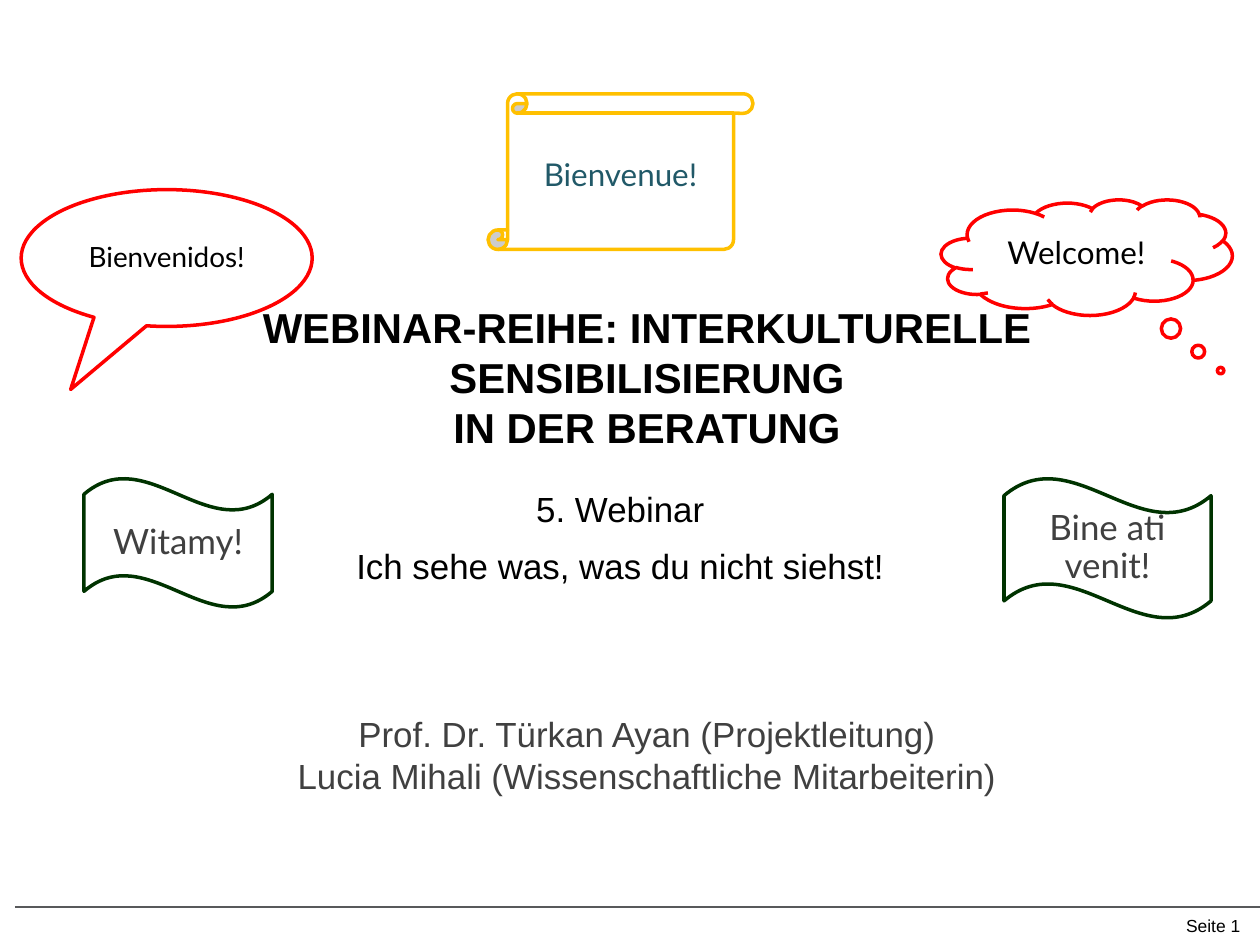
import pptx
import pptx.util
import pptx.dml.color
import pptx.enum.shapes
import pptx.enum.text
from dataclasses import dataclass
from lxml import etree

Cm = pptx.util.Cm
Pt = pptx.util.Pt
Kind = pptx.enum.shapes.MSO_SHAPE
Align = pptx.enum.text.PP_ALIGN
Anchor = pptx.enum.text.MSO_ANCHOR


@dataclass(frozen=True)
class Theme:
    """Colours, fonts and type sizes of the slide."""
    black: str = "000000"
    white: str = "FFFFFF"
    grey: str = "404040"
    rule: str = "58595B"
    red: str = "FF0000"
    gold: str = "FFC000"
    green: str = "003300"
    teal: str = "215968"
    sans: str = "Arial"
    round: str = "Lato"
    title: int = 24
    large: int = 20
    medium: int = 18
    small: int = 16
    page: int = 10


theme = Theme()


def tint(code):
    """Turn a hex code into a colour."""
    return pptx.dml.color.RGBColor.from_string(code)


def write(frame, *lines, size=theme.large, color=theme.black, font=theme.sans,
          bold=False, align=Align.CENTER, anchor=Anchor.TOP, inset=True,
          pitch=None, gap=0):
    """Fill a text frame with one paragraph per line."""
    frame.word_wrap = True
    frame.vertical_anchor = anchor
    side, edge = (Cm(0.25), Cm(0.13)) if inset else (0, 0)
    frame.margin_left = frame.margin_right = side
    frame.margin_top = frame.margin_bottom = edge
    for i, line in enumerate(lines):
        para = frame.add_paragraph() if i else frame.paragraphs[0]
        para.text = line
        para.alignment = align
        if pitch:
            para.line_spacing = pitch
        if i and gap:
            para.space_before = Pt(gap)
        for run in para.runs:
            run.font.name = font
            run.font.size = Pt(size)
            run.font.bold = bold
            run.font.color.rgb = tint(color)


def place(box, left, top, wide, high):
    """Shift a rectangle in centimetres into its box."""
    return Cm(box[0] + left), Cm(box[1] + top), Cm(wide), Cm(high)


def label(slide, area, *lines, **style):
    """Add a text box."""
    write(slide.shapes.add_textbox(*area).text_frame, *lines, **style)


def foot(slide, box):
    """Draw the rule and the page number along the bottom."""
    left, top, wide, high = box
    rule = slide.shapes.add_connector(
        pptx.enum.shapes.MSO_CONNECTOR.STRAIGHT,
        Cm(left), Cm(top), Cm(left + wide), Cm(top))
    rule.line.color.rgb = tint(theme.rule)
    rule.line.width = Pt(1.25)
    etree.SubElement(rule.element.spPr, pptx.oxml.ns.qn("a:effectLst"))
    label(slide, place(box, wide - 2.72, 0.03, 2.57, high), "Seite 1",
          size=theme.page, align=Align.RIGHT)


def heading(slide, box):
    """Write the title, the topic and the speakers."""
    wide = box[2]
    label(slide, place(box, 0, 0, wide, 3.81),
          "WEBINAR-REIHE: INTERKULTURELLE SENSIBILISIERUNG\nIN DER BERATUNG",
          size=theme.title, bold=True, inset=False)
    label(slide, place(box, 0, 5.84, wide, 4.19),
          "Prof. Dr. Türkan Ayan (Projektleitung)",
          "Lucia Mihali (Wissenschaftliche Mitarbeiterin)",
          color=theme.grey, anchor=Anchor.BOTTOM, inset=False)
    label(slide, place(box, 4.34, 3.73, 11.91, 2.24),
          "5. Webinar", "Ich sehe was, was du nicht siehst!",
          pitch=0.9, gap=11.5)


def greet(slide, area, kind, text, line, bends=(), **style):
    """Add one outlined shape with a greeting."""
    shape = slide.shapes.add_shape(kind, *area)
    shape.shadow.inherit = False
    shape.fill.solid()
    shape.fill.fore_color.rgb = tint(theme.white)
    shape.line.color.rgb = tint(line)
    shape.line.width = Pt(2)
    for i, bend in enumerate(bends):
        shape.adjustments[i] = bend
    write(shape.text_frame, text, font=theme.round, anchor=Anchor.MIDDLE,
          pitch=0.9, **style)


def welcome(slide, box):
    """Set the five greetings around the title."""
    greet(slide, place(box, 0, 1.94, 5.89, 2.77), Kind.OVAL_CALLOUT,
          "Bienvenidos!", theme.red, (-0.33, 0.96), size=theme.small)
    greet(slide, place(box, 18.62, 2.14, 5.89, 2.34), Kind.CLOUD_CALLOUT,
          "Welcome!", theme.red, (0.46, 0.98), size=theme.medium)
    greet(slide, place(box, 9.45, 0, 5.36, 3.15), Kind.VERTICAL_SCROLL,
          "Bienvenue!", theme.gold, size=theme.medium, color=theme.teal)
    waves = (("Witamy!", 1.27, 3.81, 2.62),
             ("Bine ati venit!", 19.89, 4.19, 2.84))
    for text, left, wide, high in waves:
        greet(slide, place(box, left, 7.78, wide, high), Kind.WAVE,
              text, theme.green, color=theme.grey)


def main():
    """Build and save the slide."""
    deck = pptx.Presentation()
    deck.slide_width, deck.slide_height = Cm(25.5), Cm(19.13)
    slide = deck.slides.add_slide(deck.slide_layouts[6])
    foot(slide, (0.3, 18.36, 25.2, 0.66))
    heading(slide, (2.26, 6.1, 21.67, 10.03))
    welcome(slide, (0.43, 1.9, 24.51, 10.62))
    deck.save("out.pptx")


if __name__ == "__main__":
    main()
